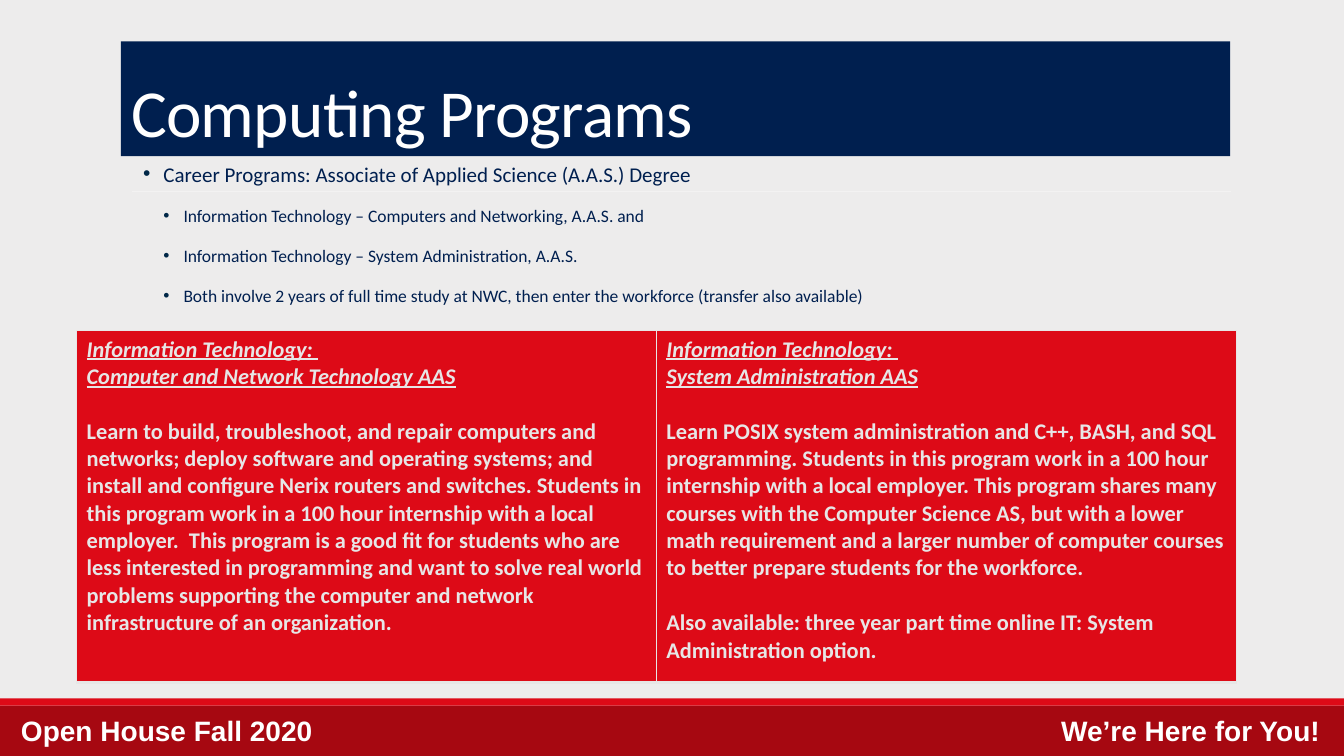
from lxml import etree
from pptx import Presentation
from pptx.dml.color import RGBColor
from pptx.enum.shapes import MSO_CONNECTOR, MSO_SHAPE
from pptx.enum.text import MSO_ANCHOR as ANCHOR, MSO_AUTO_SIZE as AUTO, PP_ALIGN as ALIGN
from pptx.oxml import parse_xml
from pptx.oxml.ns import nsdecls, qn
from pptx.util import Inches, Pt

NAVY = RGBColor(0x00, 0x1F, 0x4F)
BULLET = RGBColor(0x00, 0x27, 0x47)
RED = RGBColor(0xDD, 0x0A, 0x17)
DARK_RED = RGBColor(0xA6, 0x08, 0x11)
PAPER = RGBColor(0xED, 0xEC, 0xEC)
RULE = RGBColor(0xF3, 0xF2, 0xF2)
SILVER = RGBColor(0xE7, 0xE6, 0xE6)
WHITE = RGBColor(0xFF, 0xFF, 0xFF)

BULLETS = [
    (0.42, 15, "Career Programs: Associate of Applied Science (A.A.S.) Degree"),
    (0.62, 12.5, "Information Technology – Computers and Networking, A.A.S. and"),
    (0.62, 12.5, "Information Technology – System Administration, A.A.S."),
    (0.62, 12.5, "Both involve 2 years of full time study at NWC, then enter the workforce "
                 "(transfer also available)"),
]
PROGRAMS = [
    ("Information Technology: \vComputer and Network Technology AAS", [
        "Learn to build, troubleshoot, and repair computers and networks; deploy software and "
        "operating systems; and install and configure Nerix routers and switches. Students in "
        "this program work in a 100 hour internship with a local employer.  This program is a "
        "good fit for students who are less interested in programming and want to solve real "
        "world problems supporting the computer and network infrastructure of an organization.",
    ]),
    ("Information Technology: \vSystem Administration AAS", [
        "Learn POSIX system administration and C++, BASH, and SQL programming. Students in this "
        "program work in a 100 hour internship with a local employer. This program shares many "
        "courses with the Computer Science AS, but with a lower math requirement and a larger "
        "number of computer courses to better prepare students for the workforce.",
        "Also available: three year part time online IT: System Administration option.",
    ]),
]


def write(p, text, size=16, color=WHITE, font="Calibri", bold=False, italic=False,
          underline=False, align=ALIGN.LEFT, line=None, before=0, after=0, tracking=None):
    p.alignment = align
    p.space_before, p.space_after = Pt(before), Pt(after)
    if line:
        p.line_spacing = line
    p.text = text
    for r in p.runs:
        f = r.font
        f.name, f.size, f.bold = font, Pt(size), bold
        f.italic, f.underline = italic, underline
        f.color.rgb = color
        if tracking:
            r._r.get_or_add_rPr().set("spc", str(tracking))
    return p


class Deck:
    font = "Calibri"

    def __init__(self, prs):
        self.s = prs.slides.add_slide(prs.slide_layouts[5])
        fill = self.s.background.fill
        fill.solid()
        fill.fore_color.rgb = PAPER

    def bar(self, top, height, color):
        sp = self.s.shapes.add_shape(MSO_SHAPE.RECTANGLE, 0, Inches(top),
                                     Inches(13.33), Inches(height))
        sp.shadow.inherit = False
        sp.fill.solid()
        sp.fill.fore_color.rgb = color
        sp.line.fill.background()

    def rule(self, left, right, y):
        sp = self.s.shapes.add_connector(MSO_CONNECTOR.STRAIGHT, Inches(left), Inches(y),
                                         Inches(right), Inches(y))
        sp.line.color.rgb = RULE
        sp.line.width = Pt(0.5)
        etree.SubElement(sp._element.spPr, qn("a:effectLst"))

    def title(self, text, left, top, width, height):
        sp = self.s.shapes.title
        sp.left, sp.top = Inches(left), Inches(top)
        sp.width, sp.height = Inches(width), Inches(height)
        sp.fill.solid()
        sp.fill.fore_color.rgb = NAVY
        tf = sp.text_frame
        tf.auto_size = AUTO.NONE
        tf.vertical_anchor = ANCHOR.BOTTOM
        write(tf.paragraphs[0], text, size=48, font=self.font, line=0.85, tracking=-50)

    def box(self, left, top, width, height):
        sp = self.s.shapes.add_textbox(Inches(left), Inches(top), Inches(width), Inches(height))
        sp.text_frame.word_wrap = True
        return sp.text_frame

    def label(self, text, left, width, align):
        tf = self.box(left, 7.03, width, 0.44)
        write(tf.paragraphs[0], text, size=20, font="Arial", bold=True, align=align)

    def bullets(self, items, left, top, width, height):
        tf = self.box(left, top, width, height)
        tf.margin_left = tf.margin_right = 0
        for i, (indent, size, text) in enumerate(items):
            p = tf.paragraphs[0] if i == 0 else tf.add_paragraph()
            write(p, text, size=size, color=NAVY, font=self.font, line=0.7, before=14, after=4)
            pPr = p._p.get_or_add_pPr()
            pPr.set("marL", str(Inches(indent)))
            pPr.set("indent", str(Inches(-0.2)))
            for xml in (f'<a:buClr {nsdecls("a")}><a:srgbClr val="{BULLET}"/></a:buClr>',
                        f'<a:buFont {nsdecls("a")} typeface="Arial"/>',
                        f'<a:buChar {nsdecls("a")} char="•"/>'):
                pPr.append(parse_xml(xml))

    def borders(self, cell):
        tcPr = cell._tc.get_or_add_tcPr()
        for i, (side, width) in enumerate([("L", 1), ("R", 1), ("T", 1), ("B", 3)]):
            tcPr.insert(i, parse_xml(
                f'<a:ln{side} {nsdecls("a")} w="{Pt(width)}"><a:solidFill>'
                f'<a:srgbClr val="{SILVER}"/></a:solidFill></a:ln{side}>'))

    def table(self, programs, left, top, width, height):
        table = self.s.shapes.add_table(1, len(programs), Inches(left), Inches(top),
                                        Inches(width), Inches(height)).table
        table.first_row = table.horz_banding = False
        for cell, (heading, body) in zip(table.rows[0].cells, programs):
            cell.fill.solid()
            cell.fill.fore_color.rgb = RED
            self.borders(cell)
            tf = cell.text_frame
            write(tf.paragraphs[0], heading, color=SILVER, font=self.font,
                  bold=True, italic=True, underline=True)
            for text in body:
                write(tf.add_paragraph(), text, color=SILVER, font=self.font,
                      bold=True, before=19.5)


def main():
    prs = Presentation()
    prs.slide_width, prs.slide_height = Inches(13.33), Inches(7.5)
    deck = Deck(prs)
    deck.bar(7, 0.5, DARK_RED)
    deck.bar(6.93, 0.07, RED)
    deck.rule(1.31, 12.21, 1.9)
    deck.title("Computing Programs", 1.2, 0.41, 11, 1.14)
    deck.bullets(BULLETS, 1.2, 1.62, 10.91, 1.75)
    deck.label("We’re Here for You!", 10.33, 2.86, ALIGN.RIGHT)
    deck.label("Open House Fall 2020", 0.11, 3.49, ALIGN.LEFT)
    deck.table(PROGRAMS, 0.76, 3.28, 11.5, 3.49)
    prs.save("out.pptx")


if __name__ == "__main__":
    main()
